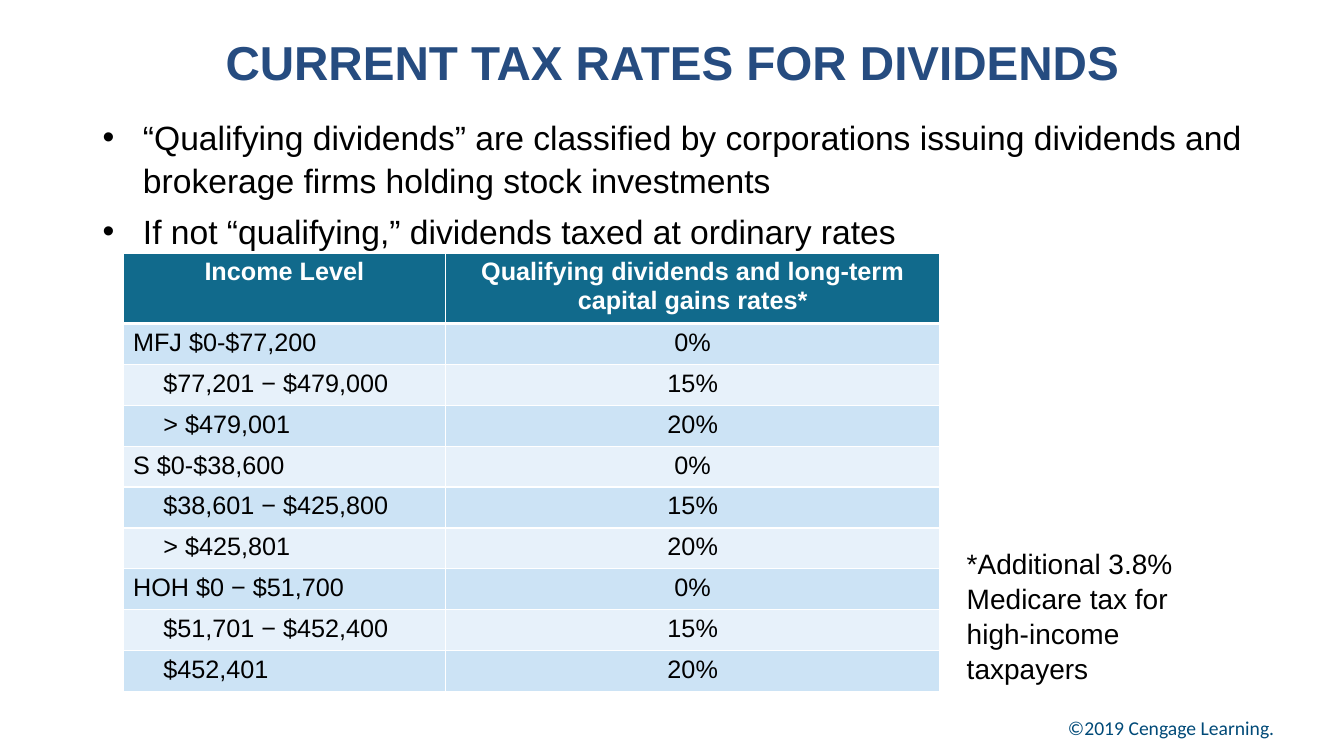
from lxml import etree
from pptx import Presentation
from pptx.dml.color import RGBColor as RGB
from pptx.enum.text import MSO_ANCHOR as Anchor, PP_ALIGN as Align
from pptx.oxml.ns import qn
from pptx.util import Inches, Pt

COLORS = {"title": "264C80", "text": "000000", "white": "FFFFFF", "head": "116A8C",
          "dark": "CCE3F5", "light": "E7F1FA", "foot": "004A78"}

TITLE = "CURRENT TAX RATES FOR DIVIDENDS"
POINTS = [
    "“Qualifying dividends” are classified by corporations issuing dividends and "
    "brokerage firms holding stock investments",
    "If not “qualifying,” dividends taxed at ordinary rates",
]
HEADS = ["Income Level", "Qualifying dividends and long-term capital gains rates*"]
RATES = ["0%", "15%", "20%"]
LEVELS = [
    ["MFJ $0-$77,200", "$77,201 − $479,000", "> $479,001"],
    ["S $0-$38,600", "$38,601 − $425,800", "> $425,801"],
    ["HOH $0 − $51,700", "$51,701 − $452,400", "$452,401"],
]
NOTE = "*Additional 3.8% Medicare tax for high-income taxpayers"
FOOT = "©2019 Cengage Learning."

COLS = [3.2, 4.9]
HEAD_H, TABLE_H = 0.65, 4.3


def write(frame, lines, size=18, color="text", bold=False, font="Arial",
          align=Align.LEFT, line=None, gap=0, indent=0, bullet=False):
    """Fill a text frame with one paragraph per line."""
    frame.word_wrap = True
    for i, text in enumerate(lines):
        para = frame.paragraphs[0] if i == 0 else frame.add_paragraph()
        props = para._p.get_or_add_pPr()
        if indent:
            props.set("marL", str(Inches(indent)))
        if bullet:
            props.set("indent", str(-Inches(indent)))
            face = etree.SubElement(props, qn("a:buFont"))
            face.set("typeface", font)
            etree.SubElement(props, qn("a:buChar")).set("char", "•")
        para.alignment = align
        para.line_spacing = line
        if i:
            para.space_before = Pt(gap)
        run = para.add_run()
        run.text = text
        run.font.size, run.font.name, run.font.bold = Pt(size), font, bold
        run.font.color.rgb = RGB.from_string(COLORS[color])


def add_text(slide, place, lines, anchor=Anchor.TOP, **style):
    box = slide.shapes.add_textbox(*map(Inches, place))
    box.text_frame.vertical_anchor = anchor
    write(box.text_frame, lines, **style)


def set_cell(cell, text, fill, base=1, **style):
    """Write a cell with white borders; base is the width of the lower one."""
    props = cell._tc.get_or_add_tcPr()
    for side, width in zip("LRTB", (1, 1, 1, base)):
        edge = etree.SubElement(props, qn("a:ln" + side))
        edge.set("w", str(Pt(width)))
        paint = etree.SubElement(edge, qn("a:solidFill"))
        etree.SubElement(paint, qn("a:srgbClr")).set("val", COLORS["white"])
    cell.fill.solid()
    cell.fill.fore_color.rgb = RGB.from_string(COLORS[fill])
    write(cell.text_frame, [text], **style)


def add_rates(slide):
    rows = [(level, rate, 0.3 if i else 0)
            for group in LEVELS
            for i, (level, rate) in enumerate(zip(group, RATES))]
    frame = slide.shapes.add_table(len(rows) + 1, len(COLS), Inches(1.22), Inches(2.51),
                                   Inches(sum(COLS)), Inches(TABLE_H))
    table = frame.table
    for col, width in zip(table.columns, COLS):
        col.width = Inches(width)
    for row in table.rows:
        row.height = Inches((TABLE_H - HEAD_H) / len(rows))
    table.rows[0].height = Inches(HEAD_H)
    for c, head in enumerate(HEADS):
        set_cell(table.cell(0, c), head, "head", base=3, color="white", bold=True,
                 align=Align.CENTER)
    for r, (level, rate, indent) in enumerate(rows, 1):
        fill = "dark" if r % 2 else "light"
        set_cell(table.cell(r, 0), level, fill, indent=indent)
        set_cell(table.cell(r, 1), rate, fill, align=Align.CENTER)


def main():
    deck = Presentation()
    deck.slide_width, deck.slide_height = Inches(13.33), Inches(7.5)
    slide = deck.slides.add_slide(deck.slide_layouts[6])
    add_text(slide, (3.16, 6.89, 9.58, 0.5), [FOOT], Anchor.BOTTOM, size=14,
             color="foot", font="Calibri", align=Align.RIGHT)
    add_text(slide, (0.92, 0.15, 11.5, 1), [TITLE], Anchor.MIDDLE, size=34,
             color="title", bold=True, align=Align.CENTER, line=0.9)
    add_text(slide, (0.92, 1.09, 11.5, 1.42), POINTS, size=24, line=1.06,
             gap=6, indent=0.4, bullet=True)
    add_rates(slide)
    add_text(slide, (9.49, 5.36, 2.4, 1.5), [NOTE], size=20, line=1.04)
    deck.save("out.pptx")


if __name__ == "__main__":
    main()
